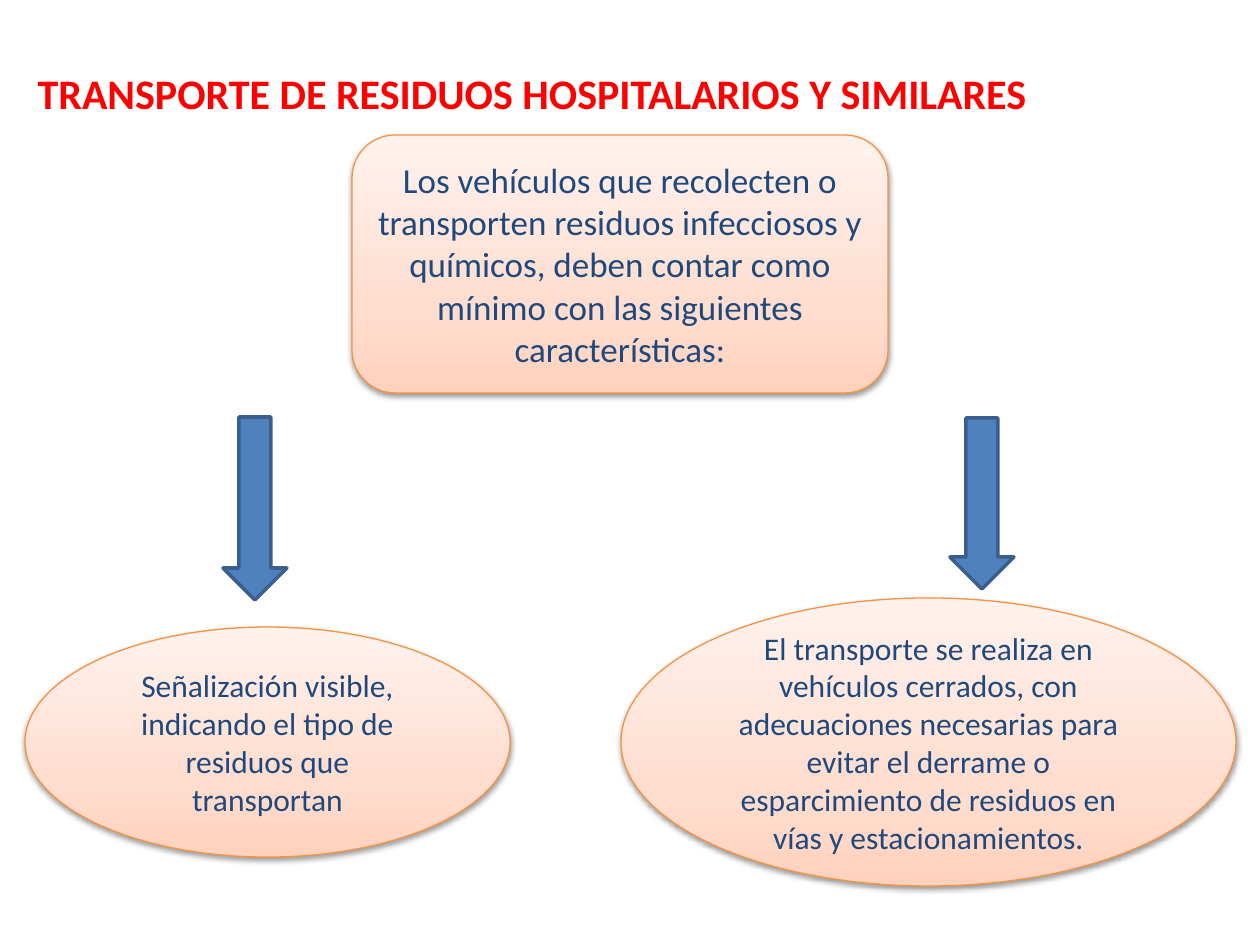
from copy import deepcopy
from lxml import etree
from pptx import Presentation
from pptx import util as u
from pptx.dml.color import RGBColor
from pptx.enum import shapes, text
from pptx.oxml import ns

PX = 914400 / 126
KIND = shapes.MSO_SHAPE


def color(code):
    return RGBColor.from_string(code)


def write(frame, words, size, tone, align, anchor):
    frame.word_wrap = True
    frame.vertical_anchor = anchor
    par = frame.paragraphs[0]
    par.alignment = align
    run = par.add_run()
    run.text = words
    run.font.name = "Calibri"
    run.font.size = u.Pt(size)
    run.font.color.rgb = color(tone)
    return run


deck = Presentation()
deck.slide_width = u.Inches(10)
deck.slide_height = u.Inches(7.5)
slide = deck.slides.add_slide(deck.slide_layouts[5])

title = slide.shapes.title
title.left, title.top, title.width, title.height = [
    round(n * PX) for n in (25, 61, 1081, 63)]
run = write(title.text_frame, "TRANSPORTE DE RESIDUOS HOSPITALARIOS Y SIMILARES",
            24, "FF0000", text.PP_ALIGN.LEFT, text.MSO_ANCHOR.TOP)
run.font.bold = True
title.text_frame.auto_size = text.MSO_AUTO_SIZE.SHAPE_TO_FIT_TEXT

stops = [(0, "FFD2BD"), (0.35, "FFDED0"), (1, "FFF2ED")]
shade = (
    f'<a:outerShdw {ns.nsdecls("a")} blurRad="40000" dist="20000" dir="5400000" '
    'rotWithShape="0"><a:srgbClr val="000000"><a:alpha val="38000"/>'
    '</a:srgbClr></a:outerShdw>'
)
nodes = [
    (KIND.ROUNDED_RECTANGLE, (352, 135, 536, 258), 20,
     "Los vehículos que recolecten o transporten residuos infecciosos y "
     "químicos, deben contar como mínimo con las siguientes características:"),
    (KIND.OVAL, (25, 627, 485, 230), 18,
     "Señalización visible, indicando el tipo de residuos que transportan"),
    (KIND.OVAL, (621, 598, 615, 288), 18,
     "El transporte se realiza en vehículos cerrados, con adecuaciones "
     "necesarias para evitar el derrame o esparcimiento de residuos en "
     "vías y estacionamientos."),
]
for kind, place, size, words in nodes:
    node = slide.shapes.add_shape(kind, *[round(n * PX) for n in place])
    node.fill.gradient()
    node.fill.gradient_angle = 90
    props = node.element.spPr
    grad = props.find(".//" + ns.qn("a:gsLst"))
    grad.insert(1, deepcopy(grad[0]))
    for stop, (spot, tone) in zip(node.fill.gradient_stops, stops):
        stop.position = spot
        stop.color.rgb = color(tone)
    node.line.color.rgb = color("F69240")
    node.line.width = u.Pt(0.75)
    node.shadow.inherit = False
    props.find(ns.qn("a:effectLst")).append(etree.fromstring(shade))
    write(node.text_frame, words, size, "1F497D",
          text.PP_ALIGN.CENTER, text.MSO_ANCHOR.MIDDLE)

for place in [(223, 417, 64, 183), (950, 418, 64, 171)]:
    arrow = slide.shapes.add_shape(KIND.DOWN_ARROW, *[round(n * PX) for n in place])
    arrow.shadow.inherit = False
    arrow.fill.solid()
    arrow.fill.fore_color.rgb = color("4F81BD")
    arrow.line.color.rgb = color("3A5F8C")
    arrow.line.width = u.Pt(2)

deck.save("out.pptx")
